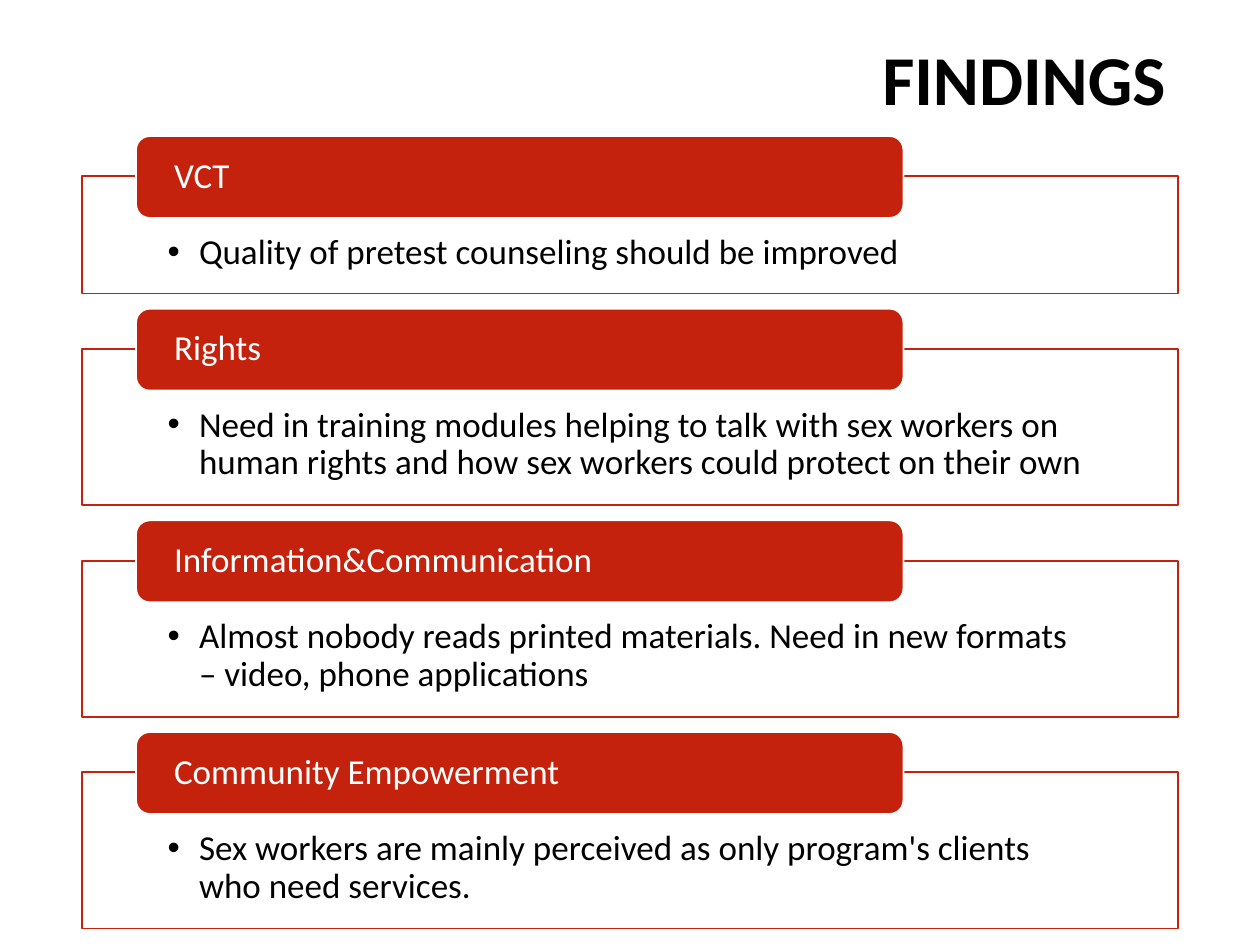
from lxml import etree
from pptx import Presentation
from pptx.dml.color import RGBColor
from pptx.enum.shapes import MSO_SHAPE as Shape
from pptx.enum.text import MSO_ANCHOR as Anchor, MSO_AUTO_SIZE as AutoSize, PP_ALIGN as Align
from pptx.oxml.ns import qn
from pptx.util import Inches, Pt

RED = RGBColor(0xC4, 0x22, 0x0D)
WHITE = RGBColor(0xFF, 0xFF, 0xFF)
BLACK = RGBColor(0, 0, 0)

FIRST_TOP, GAP, TAB_RISE = 1.4, 0.44, 0.32
FINDINGS = [
    ("VCT", "Quality of pretest counseling should be improved", 0.93),
    ("Rights", "Need in training modules helping to talk with sex workers on "
     "human rights and how sex workers could protect on their own", 1.24),
    ("Information&Communication", "Almost nobody reads printed materials. "
     "Need in new formats – video, phone applications", 1.24),
    ("Community Empowerment", "Sex workers are mainly perceived as only "
     "program's clients who need services.", 1.24),
]


def add_panel(kind, place, fill, line, insets, anchor):
    shape = page.shapes.add_shape(kind, *map(Inches, place))
    shape.shadow.inherit = False
    shape.fill.solid()
    shape.fill.fore_color.rgb = fill
    shape.line.color.rgb = line
    shape.line.width = Pt(1)
    frame = shape.text_frame
    frame.word_wrap = True
    frame.vertical_anchor = anchor
    (frame.margin_left, frame.margin_top,
     frame.margin_right, frame.margin_bottom) = map(Inches, insets)
    return shape


def write(para, text, size, color, align):
    para.text = text
    para.alignment = align
    para.line_spacing = 0.9
    para.font.name = "Calibri"
    para.font.size = Pt(size)
    para.font.color.rgb = color


deck = Presentation()
deck.slide_width, deck.slide_height = Inches(10), Inches(7.5)
page = deck.slides.add_slide(deck.slide_layouts[5])

title = page.shapes.title
title.left, title.top = Inches(2.38), Inches(0.28)
title.width, title.height = Inches(6.97), Inches(0.75)
title.text_frame.auto_size = AutoSize.NONE
title.text_frame.vertical_anchor = Anchor.MIDDLE
heading = title.text_frame.paragraphs[0]
write(heading, "FINDINGS", 40, BLACK, Align.RIGHT)
heading.font.bold = True

top = FIRST_TOP
for name, finding, height in FINDINGS:
    body = add_panel(Shape.RECTANGLE, (0.65, top, 8.7, height), WHITE, RED,
                     (0.68, 0.46, 0.68, 0.16), Anchor.TOP)
    fill_color = body.fill._xPr.find(qn("a:solidFill"))[0]
    etree.SubElement(fill_color, qn("a:alpha"), val="90000")
    para = body.text_frame.paragraphs[0]
    props = para._p.get_or_add_pPr()
    props.set("marL", str(Inches(0.25)))
    props.set("indent", str(Inches(-0.25)))
    etree.SubElement(props, qn("a:buFont"), typeface="Arial")
    etree.SubElement(props, qn("a:buChar"), char="•")
    write(para, finding, 20, BLACK, Align.LEFT)

    tab = add_panel(Shape.ROUNDED_RECTANGLE, (1.08, top - TAB_RISE, 6.09, 0.65), RED, WHITE,
                    (0.27, 0, 0.27, 0), Anchor.MIDDLE)
    write(tab.text_frame.paragraphs[0], name, 20, WHITE, Align.LEFT)
    top += height + GAP

deck.save("out.pptx")
